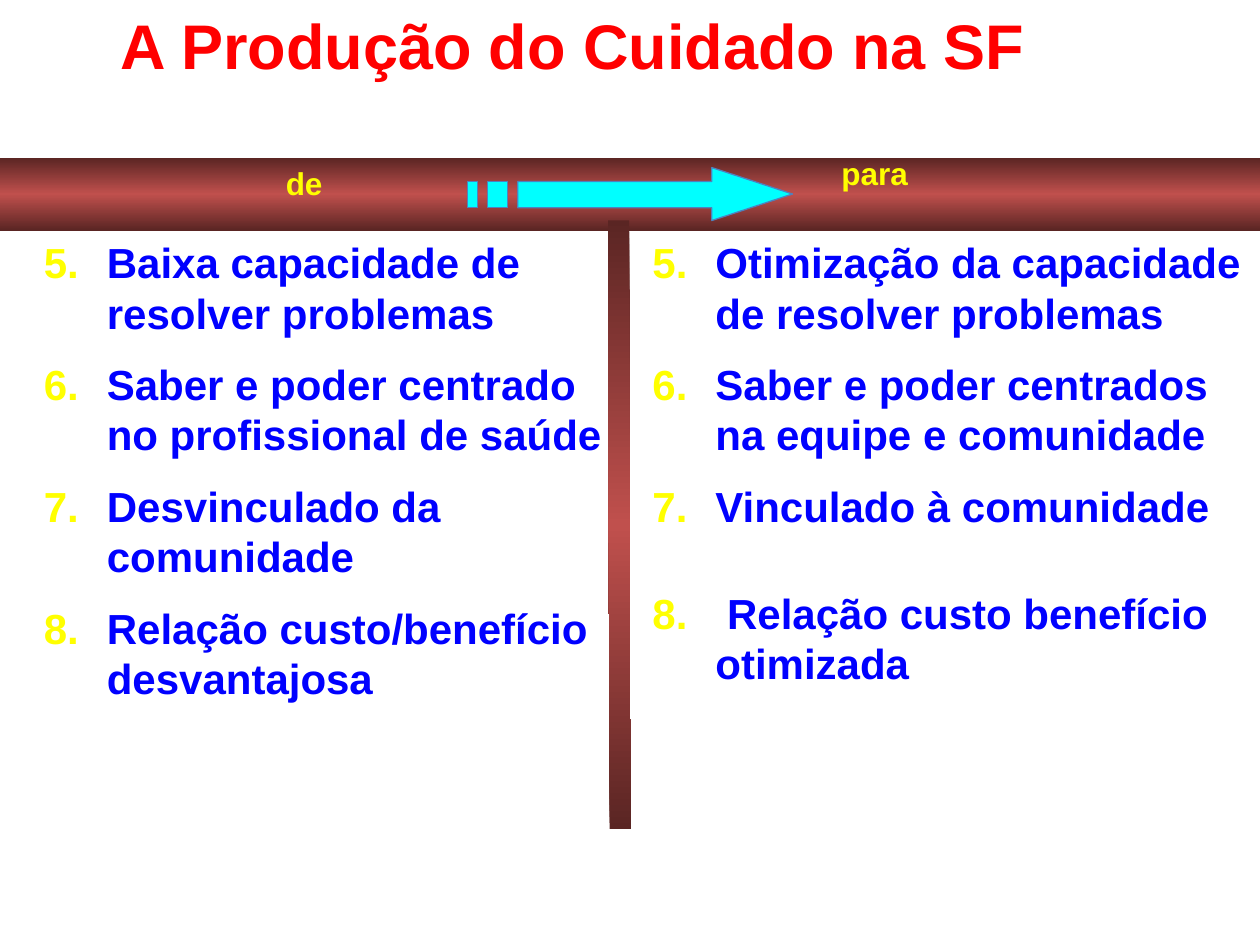
import pptx
import pptx.util
import pptx.dml.color
import pptx.enum.shapes
import pptx.oxml
import pptx.oxml.ns
from lxml import etree

Inches = pptx.util.Inches
Pt = pptx.util.Pt
RGBColor = pptx.dml.color.RGBColor

RED = RGBColor(0xFF, 0x00, 0x00)
YELLOW = RGBColor(0xFF, 0xFF, 0x00)
BLUE = RGBColor(0x00, 0x00, 0xFF)
CYAN = RGBColor(0x00, 0xFF, 0xFF)
STEEL = RGBColor(0x4F, 0x81, 0xBD)
BRICK = RGBColor(0xC0, 0x50, 0x4D)
DARK_BRICK = RGBColor(0x5A, 0x25, 0x23)

prs = pptx.Presentation()
prs.slide_width, prs.slide_height = Inches(10), Inches(7.5)
slide = prs.slides.add_slide(prs.slide_layouts[6])


def add_text_frame(left, top, width, height, wrap):
    box = slide.shapes.add_textbox(Inches(left), Inches(top), Inches(width), Inches(height))
    box.text_frame.word_wrap = wrap
    return box.text_frame


def write(paragraph, text, size, color):
    run = paragraph.add_run()
    run.text = text
    for name, value in {"name": "Arial", "size": Pt(size), "bold": True}.items():
        setattr(run.font, name, value)
    run.font.color.rgb = color


# Header band and centre divider, dark at the edges and lighter in the middle
stops = "".join(
    f'<a:gs pos="{position}"><a:srgbClr val="{color}"/></a:gs>'
    for position, color in ((0, DARK_BRICK), (50000, BRICK), (100000, DARK_BRICK))
)
gradient = (
    f'<a:gradFill {pptx.oxml.ns.nsdecls("a")} rotWithShape="0"><a:gsLst>{stops}</a:gsLst>'
    '<a:lin ang="5400000" scaled="0"/></a:gradFill>'
)
for left, top, width, height, rotation in ((0, 1.25, 10, 0.58, 0), (2.5, 4.08, 4.83, 0.17, 89.8)):
    bar = slide.shapes.add_shape(
        pptx.enum.shapes.MSO_SHAPE.RECTANGLE,
        Inches(left), Inches(top), Inches(width), Inches(height),
    )
    bar.rotation = rotation
    bar.shadow.inherit = False
    bar.line.fill.background()
    geometry = bar._element.spPr.find(pptx.oxml.ns.qn("a:prstGeom"))
    geometry.addnext(pptx.oxml.parse_xml(gradient))

# Column labels
for text, left, top, width in (("de", 2.17, 1.25, 0.66), ("para", 6.58, 1.17, 1.02)):
    label = add_text_frame(left, top, width, 0.57, False)
    write(label.paragraphs[0], text, 18, YELLOW)

# Striped arrow: head with shaft, then two stripes
contours = [
    [(5.65, 1.33), (5.65, 1.44), (4.11, 1.44), (4.11, 1.65), (5.65, 1.65), (5.65, 1.75), (6.29, 1.54)]
]
for left, right in ((3.87, 4.03), (3.71, 3.79)):
    contours.append([(left, 1.44), (left, 1.65), (right, 1.65), (right, 1.44)])
contours = [[(Inches(x), Inches(y)) for x, y in contour] for contour in contours]
outline = slide.shapes.build_freeform(*contours[0][0])
for number, (start, *others) in enumerate(contours):
    if number:
        outline.move_to(*start)
    outline.add_line_segments(others, close=True)
arrow = outline.convert_to_shape()
arrow.shadow.inherit = False
arrow.fill.solid()
arrow.fill.fore_color.rgb = CYAN
arrow.line.color.rgb = STEEL
arrow.line.width = Pt(0.75)

# Title
title = add_text_frame(0.86, 0, 8.44, 0.71, True)
write(title.paragraphs[0], "A Produção do Cuidado na SF", 36, RED)

# Numbered columns: each item with the space before it in points
columns = (
    (0.25, 4.67, 3.94, (
        ("Baixa capacidade de resolver problemas", 12),
        ("Saber e poder centrado no profissional de saúde", 12),
        ("Desvinculado da comunidade", 12),
        ("Relação custo/benefício desvantajosa", 12),
    )),
    (5.08, 4.92, 3.86, (
        ("Otimização da capacidade de resolver problemas", 12),
        ("Saber e poder centrados na equipe e comunidade", 12),
        ("Vinculado à comunidade", 12),
        (" Relação custo benefício otimizada", 32.3),
    )),
)
for left, width, height, items in columns:
    column = add_text_frame(left, 1.83, width, height, True)
    for number, (text, space) in enumerate(items):
        item = column.add_paragraph() if number else column.paragraphs[0]
        spacing = {"space_before": Pt(space), "line_spacing": Pt(28.8)}
        for name, value in spacing.items():
            setattr(item, name, value)
        write(item, text, 24, BLUE)
        properties = item._p.get_or_add_pPr()
        properties.set("marL", str(Inches(0.5)))
        properties.set("indent", str(-Inches(0.5)))
        bullet_color = etree.SubElement(properties, pptx.oxml.ns.qn("a:buClr"))
        etree.SubElement(bullet_color, pptx.oxml.ns.qn("a:srgbClr"), val=str(YELLOW))
        etree.SubElement(
            properties, pptx.oxml.ns.qn("a:buAutoNum"), type="arabicPeriod", startAt="5"
        )

prs.save("out.pptx")
